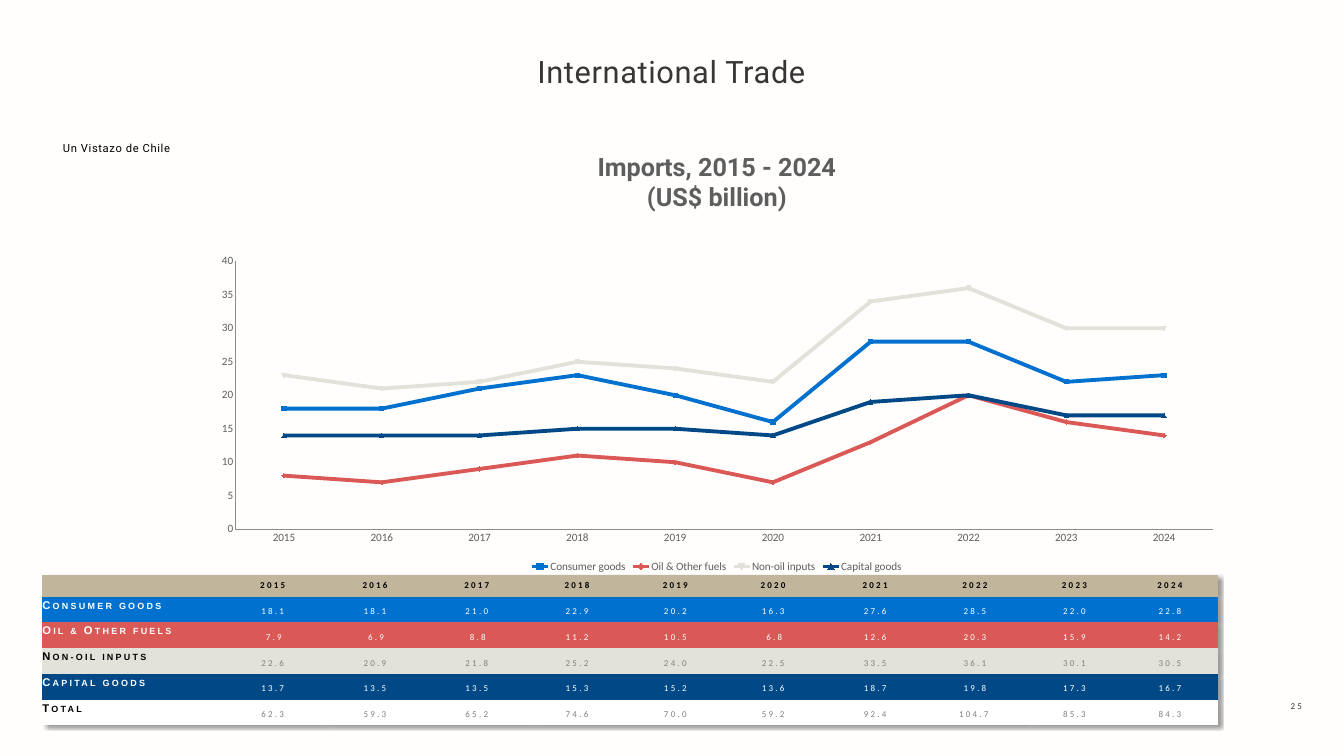
from lxml.etree import SubElement
from pptx import Presentation
from pptx.chart.data import CategoryChartData
from pptx.dml.color import RGBColor
from pptx.enum.chart import XL_CHART_TYPE, XL_LEGEND_POSITION, XL_TICK_MARK
from pptx.enum.text import MSO_ANCHOR, PP_ALIGN
from pptx.oxml import parse_xml
from pptx.oxml.ns import nsdecls, qn
from pptx.util import Inches, Pt

COLORS = {
    "background": "FFFEFC", "text": "373535", "black": "000000", "white": "FFFFFF",
    "gray": "808080", "chart": "5E5E5E", "axis": "8C8C8C", "header": "C1B69C",
    "blue": "0071CE", "red": "DA5856", "stone": "E2E2DB", "navy": "004986",
}


def rgb(name):
    return RGBColor.from_string(COLORS[name])


def write(tf, text, size, font, color, align=PP_ALIGN.LEFT, bold=False, **run_attrs):
    p = tf.paragraphs[0]
    p.alignment = align
    p.line_spacing = 1.2
    r = p.add_run()
    r.text = text
    for key, value in {"size": Pt(size), "name": font, "bold": bold}.items():
        setattr(r.font, key, value)
    r.font.color.rgb = rgb(color)
    for key, value in run_attrs.items():
        r._r.get_or_add_rPr().set(key, value)


prs = Presentation()
prs.slide_width = Inches(26.67)
prs.slide_height = Inches(15)
s = prs.slides.add_slide(prs.slide_layouts[6])
s.background.fill.solid()
s.background.fill.fore_color.rgb = rgb("background")

spaced_caps = {"spc": "320", "cap": "small"}
labels = [
    ((25.61, 13.8, 0.99, 0.29), MSO_ANCHOR.TOP,
     ("25", 16, "Calibri", "text"), spaced_caps),
    ((8.03, 0.89, 10.6, 1.73), MSO_ANCHOR.TOP,
     ("International Trade", 44, "Roboto", "text", PP_ALIGN.CENTER), {"spc": "90"}),
    ((1.25, 2.76, 4.6, 0.31), MSO_ANCHOR.MIDDLE,
     ("Un Vistazo de Chile", 16, "Roboto", "black"), {"spc": "90"}),
]
for box, anchor, content, attrs in labels:
    tf = s.shapes.add_textbox(*map(Inches, box)).text_frame
    frame = {"word_wrap": True, "vertical_anchor": anchor, "margin_left": 0,
             "margin_right": 0, "margin_top": 0, "margin_bottom": 0}
    for key, value in frame.items():
        setattr(tf, key, value)
    write(tf, *content, **attrs)

years = [str(year) for year in range(2015, 2025)]
imports = [
    ("Consumer goods", "blue", "white", "white",
     [18.1, 18.1, 21.0, 22.9, 20.2, 16.3, 27.6, 28.5, 22.0, 22.8]),
    ("Oil & Other fuels", "red", "white", "white",
     [7.9, 6.9, 8.8, 11.2, 10.5, 6.8, 12.6, 20.3, 15.9, 14.2]),
    ("Non-oil inputs", "stone", "black", "gray",
     [22.6, 20.9, 21.8, 25.2, 24.0, 22.5, 33.5, 36.1, 30.1, 30.5]),
    ("Capital goods", "navy", "white", "white",
     [13.7, 13.5, 13.5, 15.3, 15.2, 13.6, 18.7, 19.8, 17.3, 16.7]),
]
total = ("Total", "white", "black", "gray",
         [62.3, 59.3, 65.2, 74.6, 70.0, 59.2, 92.4, 104.7, 85.3, 84.3])

table_rows = [("", "header", "black", "black", years)]
table_rows += [(*row[:4], [f"{v:.1f}" for v in row[4]]) for row in imports + [total]]
widths = [3.66, 2, 2.06, 1.98, 2, 1.9, 1.98, 2.07, 1.89, 2.06, 1.73]
table = s.shapes.add_table(len(table_rows), len(widths), Inches(0.84), Inches(11.41),
                           Inches(23.33), Inches(2.99)).table
tbl_pr = table._tbl.tblPr
tbl_pr.find(qn("a:tableStyleId")).text = "{2D5ABB26-0587-4C30-8999-92F81FD0307C}"
tbl_pr.insert(0, parse_xml(
    f'<a:effectLst {nsdecls("a")}><a:outerShdw blurRad="50800" dist="63500" dir="2700000" '
    'algn="tl" rotWithShape="0"><a:srgbClr val="000000"><a:alpha val="40000"/></a:srgbClr>'
    '</a:outerShdw></a:effectLst>'))
for column, width in zip(table.columns, widths):
    column.width = Inches(width)

for i, (label, fill, label_color, value_color, values) in enumerate(table_rows):
    is_header = i == 0
    table.rows[i].height = Inches(0.43 if is_header else 0.51)
    for j, text in enumerate([label] + values):
        cell = table.cell(i, j)
        cell.fill.solid()
        cell.fill.fore_color.rgb = rgb(fill)
        is_label = j == 0
        if is_header:
            margins = (0.01, 0.01, 0.01, 0)
        elif is_label:
            margins = (0, 0, 0, 0)
        else:
            margins = (0.1, 0.05, 0.1, 0.05)
        for side, margin in zip(("left", "top", "right", "bottom"), margins):
            setattr(cell, f"margin_{side}", Inches(margin))
        cell.vertical_anchor = MSO_ANCHOR.TOP if is_header or is_label else MSO_ANCHOR.MIDDLE
        if text:
            write(cell.text_frame, text, 16, "Arial" if is_label else "Calibri",
                  label_color if is_label else value_color,
                  PP_ALIGN.LEFT if is_label else PP_ALIGN.CENTER,
                  is_header or is_label, **spaced_caps)

data = CategoryChartData(number_format="0")
data.categories = years
for name, *_, values in imports:
    data.add_series(name, [round(v) for v in values])
chart = s.shapes.add_chart(XL_CHART_TYPE.LINE_MARKERS, Inches(3.99), Inches(2.76),
                           Inches(20.47), Inches(8.66), data).chart
chart.font.size = Pt(10)
chart.font.name = "Roboto"
chart.font.color.rgb = rgb("chart")

chart.has_title = True
title = chart.chart_title
title.include_in_layout = False
title.text_frame.text = "Imports, 2015 - 2024\n(US$ billion)"
for p in title.text_frame.paragraphs:
    for key, value in {"size": Pt(36), "name": "Roboto", "bold": True}.items():
        setattr(p.runs[0].font, key, value)
    p.runs[0].font.color.rgb = rgb("chart")

chart.has_legend = True
chart.legend.position = XL_LEGEND_POSITION.BOTTOM
chart.legend.include_in_layout = False
for axis in (chart.category_axis, chart.value_axis):
    axis.has_major_gridlines = False
    axis.major_tick_mark = XL_TICK_MARK.NONE
    axis.minor_tick_mark = XL_TICK_MARK.NONE
    axis.format.line.color.rgb = rgb("axis")
    axis.format.line.width = Pt(0.75)
for font in (chart.legend.font, chart.category_axis.tick_labels.font,
             chart.value_axis.tick_labels.font):
    font.size = Pt(16)
    font.name = "Calibri"
    font.color.rgb = rgb("chart")
for key, value in {"minimum_scale": 0, "maximum_scale": 40, "major_unit": 5}.items():
    setattr(chart.value_axis, key, value)
chart.value_axis.tick_labels.number_format = "0"
chart.value_axis.tick_labels.number_format_is_linked = False

plot = chart.plots[0]
plot.vary_by_categories = False
for series, (_, color, *_) in zip(plot.series, imports):
    series.smooth = False
    series.format.line.color.rgb = rgb(color)
    series.format.line.width = Pt(5.5)
    series.marker.size = 6
    series.marker.format.fill.solid()
    series.marker.format.fill.fore_color.rgb = rgb(color)
    series.marker.format.line.color.rgb = rgb(color)

plot_area = chart._chartSpace.chart.plotArea
for layout in plot_area.findall(qn("c:layout")):
    plot_area.remove(layout)
layout = parse_xml(f'<c:layout {nsdecls("c")}><c:manualLayout/></c:layout>')
plot_area.insert(0, layout)
for tag, value in {"layoutTarget": "inner", "xMode": "edge", "yMode": "edge",
                   "x": "0.033", "y": "0.28", "w": "0.948", "h": "0.614"}.items():
    SubElement(layout[0], qn(f"c:{tag}")).set("val", value)

prs.save("out.pptx")
